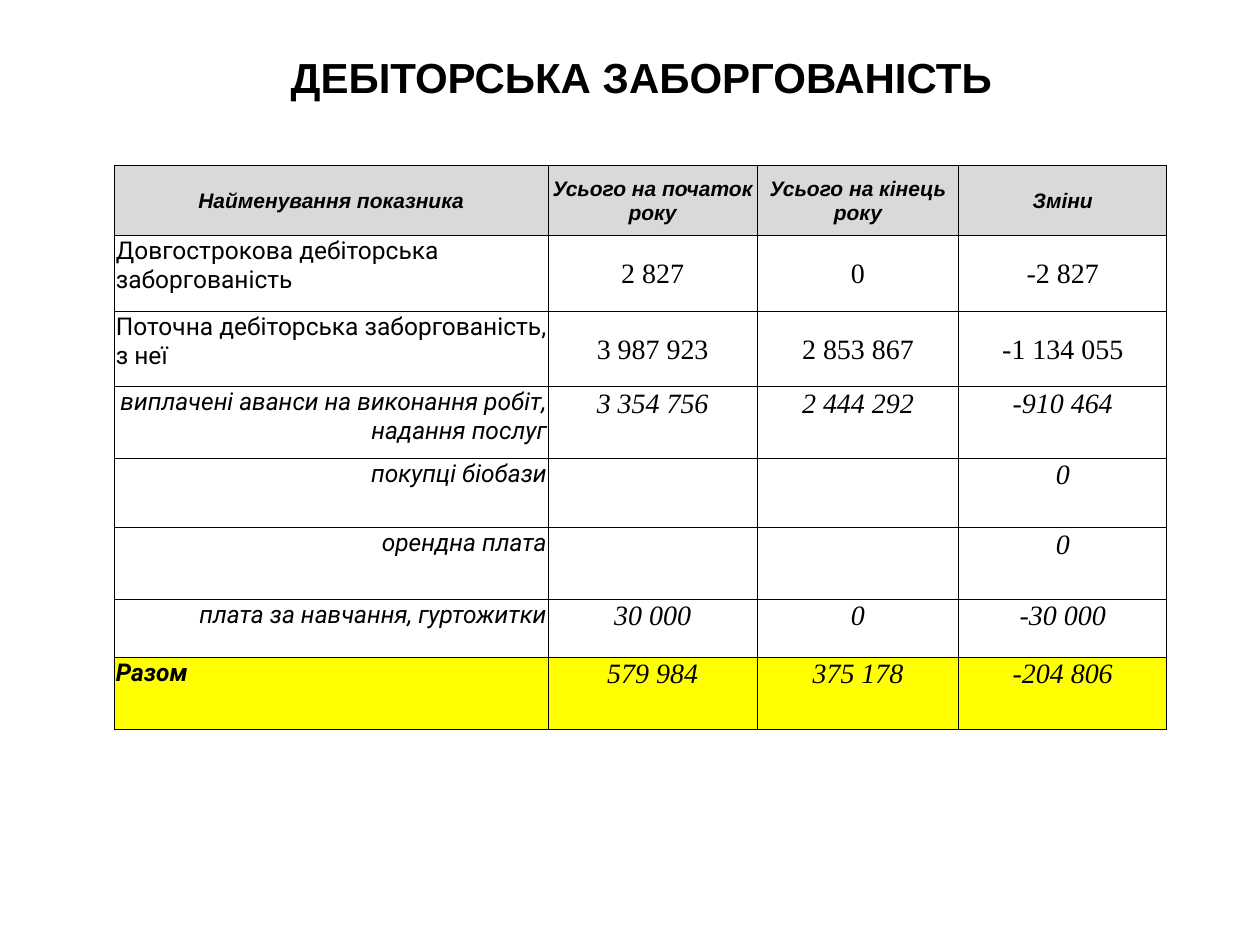
from dataclasses import dataclass

from lxml import etree
from pptx import Presentation
from pptx.dml.color import RGBColor
from pptx.enum.text import MSO_ANCHOR, PP_ALIGN
from pptx.oxml import ns
from pptx.util import Inches, Pt


@dataclass(frozen=True)
class Theme:
    ink: str = "000000"
    head: str = "D9D9D9"
    total: str = "FFFF00"
    sans: str = "Arial"
    label: str = "Roboto"
    serif: str = "Times New Roman"
    title: int = 24
    small: int = 12
    body: int = 14
    number: int = 16
    line: float = 0.5


T = Theme()
LEFT, MID, RIGHT = PP_ALIGN.LEFT, PP_ALIGN.CENTER, PP_ALIGN.RIGHT

HEADS = ["Найменування показника", "Усього на початок року",
         "Усього на кінець року", "Зміни"]
ROWS = [
    ("main", "Довгострокова дебіторська заборгованість", "2 827", "0", "-2 827"),
    ("main", "Поточна дебіторська заборгованість, з неї",
     "3 987 923", "2 853 867", "-1 134 055"),
    ("sub", "виплачені аванси на виконання робіт, надання послуг",
     "3 354 756", "2 444 292", "-910 464"),
    ("sub", "покупці біобази", "", "", "0"),
    ("sub", "орендна плата", "", "", "0"),
    ("sub", "плата за навчання, гуртожитки", "30 000", "0", "-30 000"),
    ("total", "Разом", "579 984", "375 178", "-204 806"),
]
WIDTHS = [3.44, 1.66, 1.6, 1.65]
HEIGHTS = [0.56, 0.6, 0.6, 0.57, 0.55, 0.57, 0.46, 0.57]


def write(frame, words, font, size, bold=False, italic=False, align=MID):
    para = frame.paragraphs[0]
    para.alignment = align
    run = para.add_run()
    run.text = words
    run.font.name, run.font.size = font, Pt(size)
    run.font.bold, run.font.italic = bold, italic
    run.font.color.rgb = RGBColor.from_string(T.ink)


def border(cell):
    props = cell._tc.get_or_add_tcPr()
    for side in ("lnL", "lnR", "lnT", "lnB"):
        line = etree.SubElement(props, ns.qn(f"a:{side}"), w=str(Pt(T.line)))
        fill = etree.SubElement(line, ns.qn("a:solidFill"))
        etree.SubElement(fill, ns.qn("a:srgbClr"), val=T.ink)


def style(cell, fill, anchor):
    cell.margin_left = cell.margin_right = cell.margin_top = Inches(0.01)
    cell.margin_bottom = 0
    cell.vertical_anchor = anchor
    border(cell)
    if fill:
        cell.fill.solid()
        cell.fill.fore_color.rgb = RGBColor.from_string(fill)
    else:
        cell.fill.background()


def add_title(slide, box):
    title = slide.shapes.title
    title.left, title.top, title.width, title.height = map(Inches, box)
    title.text_frame.vertical_anchor = MSO_ANCHOR.MIDDLE
    write(title.text_frame, "ДЕБІТОРСЬКА ЗАБОРГОВАНІСТЬ", T.sans, T.title, bold=True)


def add_debts(slide, box):
    table = slide.shapes.add_table(
        len(ROWS) + 1, len(HEADS), *map(Inches, box)).table
    table.first_row = table.horz_banding = False
    for col, width in zip(table.columns, WIDTHS):
        col.width = Inches(width)
    for row, height in zip(table.rows, HEIGHTS):
        row.height = Inches(height)

    for col, words in enumerate(HEADS):
        cell = table.cell(0, col)
        style(cell, T.head, MSO_ANCHOR.MIDDLE)
        write(cell.text_frame, words, T.sans, T.small, bold=True, italic=True)

    for row, (kind, *texts) in enumerate(ROWS, 1):
        fill = T.total if kind == "total" else None
        slant = kind != "main"
        for col, words in enumerate(texts):
            cell = table.cell(row, col)
            middle = kind == "main" and col > 0
            style(cell, fill, MSO_ANCHOR.MIDDLE if middle else MSO_ANCHOR.TOP)
            if col == 0:
                write(cell.text_frame, words, T.label, T.body, italic=slant,
                      bold=kind == "total", align=RIGHT if kind == "sub" else LEFT)
            elif words:
                write(cell.text_frame, words, T.serif, T.number, italic=slant)


def main():
    deck = Presentation()
    deck.slide_width, deck.slide_height = Inches(10), Inches(7.5)
    slide = deck.slides.add_slide(deck.slide_layouts[5])
    add_title(slide, (0.59, 0.29, 9, 0.63))
    add_debts(slide, (0.91, 1.31, sum(WIDTHS), sum(HEIGHTS)))
    deck.save("out.pptx")


if __name__ == "__main__":
    main()
